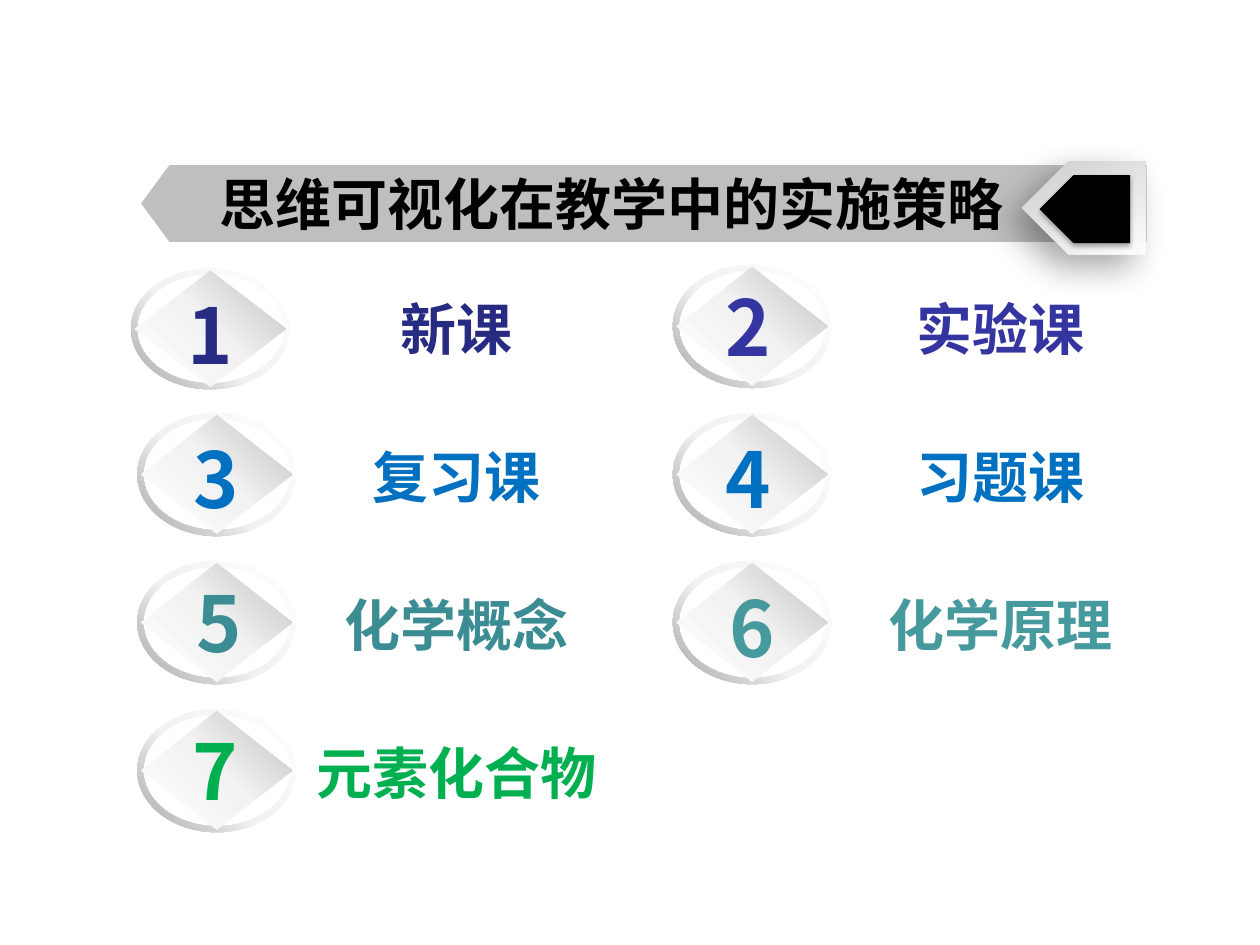
from lxml.etree import SubElement
from pptx import Presentation
from pptx.dml.color import RGBColor
from pptx.enum.shapes import MSO_SHAPE
from pptx.enum.text import MSO_ANCHOR, MSO_AUTO_SIZE, PP_ALIGN
from pptx.oxml.ns import qn
from pptx.util import Inches, Pt

FONT = "Noto Sans CJK SC"
TITLE = "思维可视化在教学中的实施策略"

# Label, colour, digit box offset from the badge (left, top)
ITEMS = [
    ("新课", "272B81", 0.34, 0.10),
    ("实验课", "3535A2", 0.31, 0.07),
    ("复习课", "0070C0", 0.34, 0.10),
    ("习题课", "0070C0", 0.31, 0.10),
    ("化学概念", "3C8C93", 0.36, 0.07),
    ("化学原理", "46999D", 0.34, 0.11),
    ("元素化合物", "00B050", 0.33, 0.07),
]
BADGE_X, LABEL_X = (1.09, 5.34), (2.32, 6.64)
TOP, STEP = 2.10, 1.175
RING = [(0, "FFFFFF"), (55, "F2F2F2"), (100, "A6A6A6")]
GEM = [(0, "FFFFFF"), (51, "F2F2F2"), (100, "BFBFBF")]
FRAME = [(0, "CCCCCC"), (100, "FCFCFC")]


def color(code):
    return RGBColor.from_string(code)


def add_shape(parent, kind, box, fill=None, adj=None, flip=False):
    shape = parent.add_shape(kind, *map(Inches, box))
    shape.shadow.inherit = False
    shape.line.fill.background()
    if fill:
        shape.fill.solid()
        shape.fill.fore_color.rgb = color(fill)
    else:
        shape.fill.background()
    if adj is not None:
        shape.adjustments[0] = adj
    if flip:
        shape._element.spPr.find(qn("a:xfrm")).set("flipH", "1")
    return shape


def set_grad(shape, stops, angle):
    shape.fill.gradient()
    grad = shape._element.spPr.find(qn("a:gradFill"))
    items = grad.find(qn("a:gsLst"))
    for old in list(items):
        items.remove(old)
    for pos, code in stops:
        stop = SubElement(items, qn("a:gs"), pos=str(pos * 1000))
        SubElement(stop, qn("a:srgbClr"), val=code)
    # Clockwise in the file, counter-clockwise in the property
    shape.fill.gradient_angle = 360 - angle


def set_shadow(shape, alpha, blur, dist, angle):
    effects = shape._element.spPr.find(qn("a:effectLst"))
    outer = SubElement(effects, qn("a:outerShdw"), blurRad=str(Pt(blur)),
                       dist=str(Pt(dist)), dir=str(angle * 60000),
                       algn="ctr", rotWithShape="0")
    tint = SubElement(outer, qn("a:srgbClr"), val="000000")
    SubElement(tint, qn("a:alpha"), val=str(alpha * 1000))


def set_text(shape, text, size, code, pad=(0.1, 0.05), wrap=True):
    frame = shape.text_frame
    frame.word_wrap = wrap
    frame.margin_left = frame.margin_right = Inches(pad[0])
    frame.margin_top = frame.margin_bottom = Inches(pad[1])
    para = frame.paragraphs[0]
    para.text = text
    para.alignment = PP_ALIGN.CENTER
    font = para.font
    font.name, font.size, font.bold = FONT, Pt(size), True
    font.color.rgb = color(code)
    SubElement(font._element, qn("a:ea"), typeface=FONT)
    return frame


def add_text(parent, box, *args, **opts):
    shape = parent.add_textbox(*map(Inches, box))
    frame = set_text(shape, *args, **opts)
    frame.auto_size = MSO_AUTO_SIZE.SHAPE_TO_FIT_TEXT


def add_badge(shapes, num, box, code, dx, dy):
    x, y, w, h = box
    group = shapes.add_group_shape().shapes
    ring = add_shape(group, MSO_SHAPE.DONUT, box, adj=0.049)
    set_grad(ring, RING, 135)
    gem = add_shape(group, MSO_SHAPE.DIAMOND,
                    (x + 0.03, y + 0.02, w - 0.06, h - 0.04))
    set_grad(gem, GEM, 315)
    add_text(group, (x + dx, y + dy, 0.58, 0.84), str(num), 44, code,
             wrap=False)


def main():
    deck = Presentation()
    deck.slide_width, deck.slide_height = Inches(10), Inches(7.5)
    shapes = deck.slides.add_slide(deck.slide_layouts[6]).shapes

    # Title band
    add_shape(shapes, MSO_SHAPE.PENTAGON, (1.12, 1.31, 7.98, 0.61),
              "BFBFBF", 0.368, True)
    title = add_shape(shapes, MSO_SHAPE.ROUNDED_RECTANGLE,
                      (1.47, 1.25, 6.77, 0.73))
    frame = set_text(title, TITLE, 32, "000000", (0.09, 0.04))
    frame.vertical_anchor = MSO_ANCHOR.MIDDLE

    # Arrow at the end of the band
    arrow = shapes.add_group_shape().shapes
    outer = add_shape(arrow, MSO_SHAPE.PENTAGON, (8.11, 1.28, 0.98, 0.74),
                      flip=True)
    set_grad(outer, FRAME, 120)
    set_shadow(outer, 34, 20, 10, 136)
    inner = add_shape(arrow, MSO_SHAPE.PENTAGON, (8.25, 1.39, 0.72, 0.54),
                      "000000", flip=True)
    set_shadow(inner, 35, 3.1, 1.8, 90)

    # Numbered items in two columns
    for i, (label, code, dx, dy) in enumerate(ITEMS):
        row, col = divmod(i, 2)
        y = TOP + row * STEP
        box = (BADGE_X[col], y, 1.26, 0.98)
        if i == 0:  # the first badge sits slightly off the grid
            box = (1.04, 2.13, 1.26, 0.96)
        add_badge(shapes, i + 1, box, code, dx, dy)
        add_text(shapes, (LABEL_X[col], y + 0.17, 2.61, 0.67),
                 label, 32, code, pad=(0.13, 0.07))

    deck.save("out.pptx")


if __name__ == "__main__":
    main()
